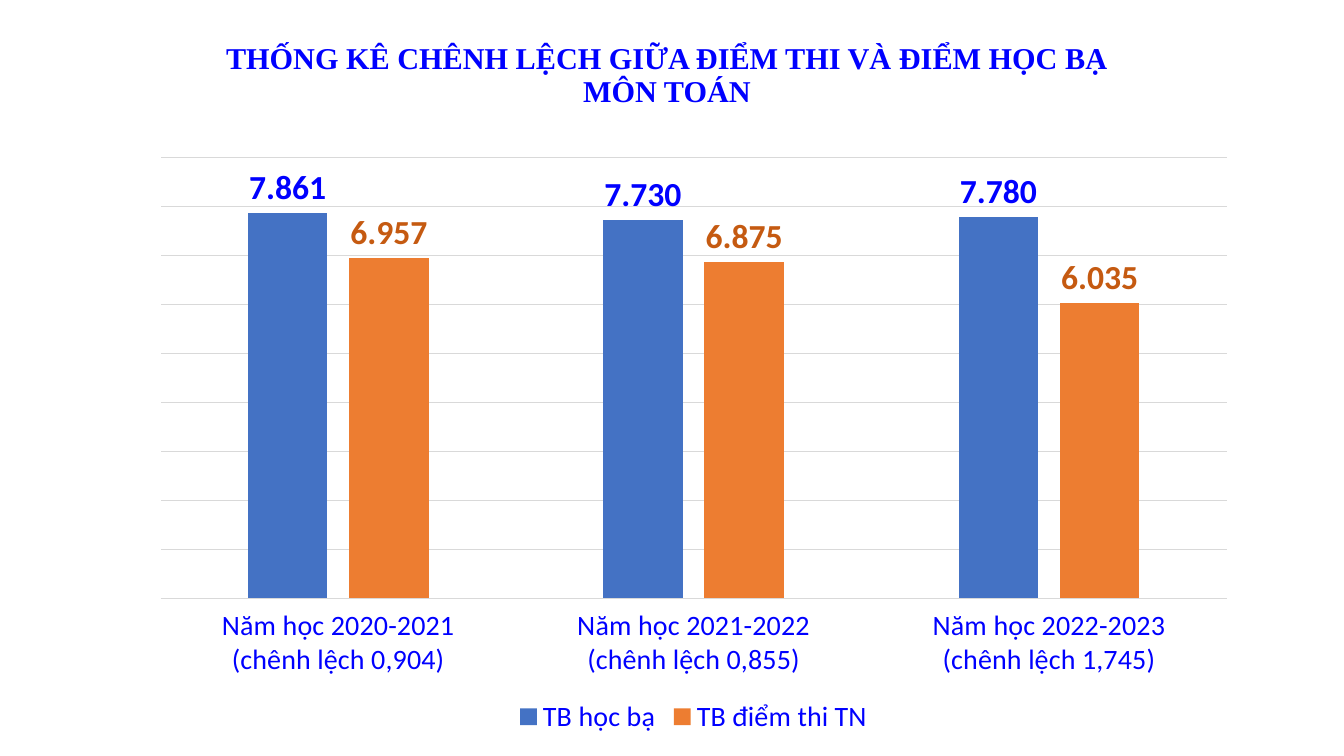
from lxml.etree import SubElement
from pptx import Presentation
from pptx.chart.data import CategoryChartData
from pptx.dml.color import RGBColor
from pptx.enum.chart import XL_CHART_TYPE, XL_LABEL_POSITION, XL_LEGEND_POSITION, XL_TICK_LABEL_POSITION, XL_TICK_MARK
from pptx.enum.text import MSO_ANCHOR, MSO_AUTO_SIZE, PP_ALIGN
from pptx.oxml.ns import qn
from pptx.util import Inches, Pt

WIDTH, HEIGHT = 13.33, 7.5
BLUE, GREY = "0000FF", "D9D9D9"
TITLE = "THỐNG KÊ CHÊNH LỆCH GIỮA ĐIỂM THI VÀ ĐIỂM HỌC BẠ\vMÔN TOÁN"
CATEGORIES = [
    "Năm học 2020-2021\n(chênh lệch 0,904)",
    "Năm học 2021-2022\n(chênh lệch 0,855)",
    "Năm học 2022-2023\n(chênh lệch 1,745)",
]
# Name, values, bar colour, label colour
SERIES = [
    ("TB học bạ", (7.861, 7.73, 7.78), "4472C4", BLUE),
    ("TB điểm thi TN", (6.957, 6.875, 6.035), "ED7D31", "C55A11"),
]
# Boxes: left, top, width, height in inches
TITLE_BOX = (0, 0.53, 13.23, 0.45)
CHART_BOX = (1.44, 1.41, 10.88, 5.93)
# Inner plot area as shares of the chart
PLOT_SHARES = {"x": 0.014, "y": 0.026, "w": 0.972, "h": 0.737}


def colour(value):
    return RGBColor.from_string(value)


def set_all(target, **values):
    for name, value in values.items():
        setattr(target, name, value)


def set_font(font, size, hex_colour, name="Calibri", bold=False):
    set_all(font, size=Pt(size), name=name, bold=bold)
    font.color.rgb = colour(hex_colour)


def set_line(line, hex_colour):
    line.color.rgb = colour(hex_colour)
    line.width = Pt(0.75)


def add_title(slide, box):
    title = slide.shapes.title
    set_all(title, **dict(zip(("left", "top", "width", "height"), map(Inches, box))))
    frame = title.text_frame
    frame.text = TITLE
    set_all(frame, vertical_anchor=MSO_ANCHOR.MIDDLE, word_wrap=True,
            auto_size=MSO_AUTO_SIZE.NONE)
    paragraph = frame.paragraphs[0]
    set_all(paragraph, alignment=PP_ALIGN.CENTER, line_spacing=0.9)
    for run in paragraph.runs:
        set_font(run.font, 21.6, BLUE, "Times New Roman", True)


def place_plot(chart):
    plot_area = chart._chartSpace.chart.plotArea
    for layout in plot_area.findall(qn("c:layout")):
        plot_area.remove(layout)
    layout = SubElement(plot_area, qn("c:layout"))
    plot_area.insert(0, layout)
    manual = SubElement(layout, qn("c:manualLayout"))
    settings = {"layoutTarget": "inner", "xMode": "edge", "yMode": "edge", **PLOT_SHARES}
    for tag, value in settings.items():
        SubElement(manual, qn(f"c:{tag}")).set("val", str(value))


def format_axes(chart):
    category_axis = chart.category_axis
    set_all(category_axis, major_tick_mark=XL_TICK_MARK.NONE,
            minor_tick_mark=XL_TICK_MARK.NONE,
            tick_label_position=XL_TICK_LABEL_POSITION.LOW)
    set_font(category_axis.tick_labels.font, 20, BLUE)
    set_line(category_axis.format.line, GREY)

    value_axis = chart.value_axis
    set_all(value_axis, visible=False, has_major_gridlines=True,
            minimum_scale=0, maximum_scale=9, major_unit=1)
    set_line(value_axis.major_gridlines.format.line, GREY)


def add_score_chart(slide, box):
    data = CategoryChartData(number_format="0.000")
    data.categories = CATEGORIES
    for name, values, *_ in SERIES:
        data.add_series(name, values)
    chart = slide.shapes.add_chart(
        XL_CHART_TYPE.COLUMN_CLUSTERED, *map(Inches, box), data).chart
    set_all(chart, has_title=False, has_legend=True)
    set_font(chart.font, 10, "000000")
    place_plot(chart)
    format_axes(chart)

    # Legend
    set_all(chart.legend, position=XL_LEGEND_POSITION.BOTTOM, include_in_layout=False)
    set_font(chart.legend.font, 20, BLUE)

    # Bars and their value labels
    plot = chart.plots[0]
    set_all(plot, gap_width=219, overlap=-27, vary_by_categories=False)
    for series, (_, _, bar_colour, label_colour) in zip(plot.series, SERIES):
        series.format.fill.solid()
        series.format.fill.fore_color.rgb = colour(bar_colour)
        labels = series.data_labels
        set_all(labels, show_value=True, position=XL_LABEL_POSITION.OUTSIDE_END,
                number_format="0.000", number_format_is_linked=False)
        set_font(labels.font, 24, label_colour, bold=True)


def main():
    presentation = Presentation()
    set_all(presentation, slide_width=Inches(WIDTH), slide_height=Inches(HEIGHT))
    slide = presentation.slides.add_slide(presentation.slide_layouts.get_by_name("Title Only"))
    add_title(slide, TITLE_BOX)
    add_score_chart(slide, CHART_BOX)
    presentation.save("out.pptx")


if __name__ == "__main__":
    main()
